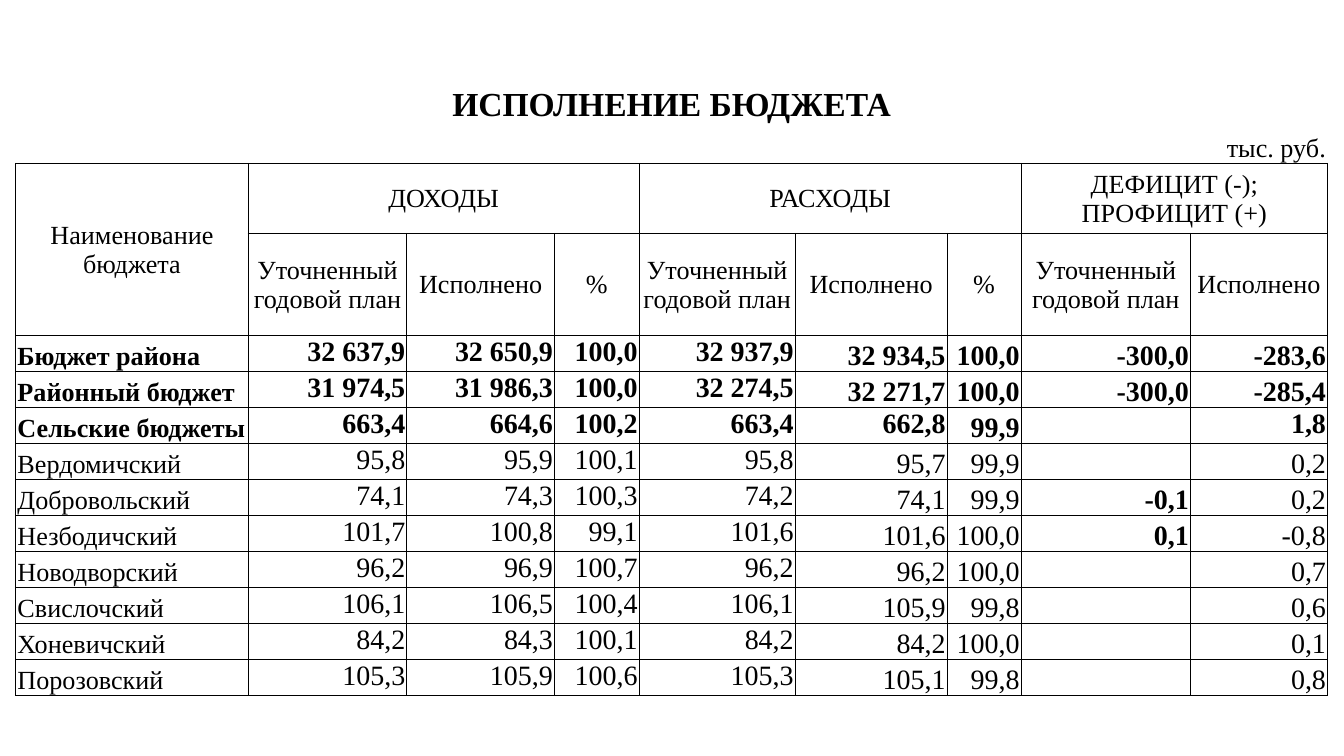
from lxml.etree import SubElement
from pptx import Presentation
from pptx.dml.color import RGBColor
from pptx.enum.text import MSO_ANCHOR as Anchor, PP_ALIGN as Align
from pptx.oxml.ns import qn
from pptx.util import Cm, Pt

BLACK = RGBColor(0x00, 0x00, 0x00)
WHITE = RGBColor(0xFF, 0xFF, 0xFF)
FONT = "Times New Roman"

# Content
TITLE = "ИСПОЛНЕНИЕ БЮДЖЕТА"
UNIT = "тыс. руб."
NAME_HEADING = "Наименование бюджета"
PLAN, DONE = "Уточненный годовой план", "Исполнено"
GROUPS = [  # heading, first column, last column
    ("ДОХОДЫ", 1, 5),
    ("РАСХОДЫ", 6, 9),
    ("ДЕФИЦИТ (-); ПРОФИЦИТ (+)", 10, 12),
]
HEADINGS = [PLAN, DONE, "%", PLAN, DONE, "%", PLAN, DONE]
BUDGETS = [
    ("Бюджет района", "32 637,9", "32 650,9", "100,0", "32 937,9", "32 934,5", "100,0", "-300,0", "-283,6"),
    ("Районный бюджет", "31 974,5", "31 986,3", "100,0", "32 274,5", "32 271,7", "100,0", "-300,0", "-285,4"),
    ("Сельские бюджеты", "663,4", "664,6", "100,2", "663,4", "662,8", "99,9", "", "1,8"),
    ("Вердомичский", "95,8", "95,9", "100,1", "95,8", "95,7", "99,9", "", "0,2"),
    ("Добровольский", "74,1", "74,3", "100,3", "74,2", "74,1", "99,9", "-0,1", "0,2"),
    ("Незбодичский", "101,7", "100,8", "99,1", "101,6", "101,6", "100,0", "0,1", "-0,8"),
    ("Новодворский", "96,2", "96,9", "100,7", "96,2", "96,2", "100,0", "", "0,7"),
    ("Свислочский", "106,1", "106,5", "100,4", "106,1", "105,9", "99,8", "", "0,6"),
    ("Хоневичский", "84,2", "84,3", "100,1", "84,2", "84,2", "100,0", "", "0,1"),
    ("Порозовский", "105,3", "105,9", "100,6", "105,3", "105,1", "99,8", "", "0,8"),
]
TOTAL_ROWS = 3  # leading rows set in bold
VILLAGE_TOTAL = 2  # row whose executed amounts all sit at the top

# Grid: sizes in centimetres, spans as (first, last) column
COLUMN_WIDTHS = [4.39, 2.57, 0.43, 1.85, 0.94, 1.6, 2.95, 2.29, 0.58, 1.4, 3.2, 0.3, 2.29]
ROW_HEIGHTS = [0.86, 0.69, 1.32, 1.93] + [0.68] * len(BUDGETS)
TITLE_ROW, UNIT_ROW, GROUP_ROW, HEADING_ROW, FIRST_BUDGET_ROW = range(5)
LAST_COLUMN = len(COLUMN_WIDTHS) - 1
UNIT_SPANS = [(2, 3), (4, 5), (8, 9), (10, 11)]
VALUE_SPANS = [(1, 2), (3, 4), (5, 5), (6, 6), (7, 8), (9, 9), (10, 10), (11, 12)]


def write(cell, text, size=14, bold=False, align=Align.CENTER, anchor=Anchor.MIDDLE):
    cell.vertical_anchor = anchor
    paragraph = cell.text_frame.paragraphs[0]
    paragraph.alignment = align
    run = paragraph.add_run()
    run.text = text
    run.font.name = FONT
    run.font.size = Pt(size)
    run.font.bold = bold
    run.font.color.rgb = BLACK


def set_borders(cell, black_sides):
    properties = cell._tc.get_or_add_tcPr()
    for side in "LRTB":
        line = SubElement(properties, qn(f"a:ln{side}"), w=str(Pt(0.5)))
        if side in black_sides:
            fill = SubElement(line, qn("a:solidFill"))
            SubElement(fill, qn("a:srgbClr"), val=str(BLACK))
        else:
            SubElement(line, qn("a:noFill"))


def merge(table, row, first, last, last_row=None):
    cell = table.cell(row, first)
    end = table.cell(row if last_row is None else last_row, last)
    if cell is not end and (first != last or last_row is not None):
        cell.merge(end)
    return cell


def prepare_cells(table):
    for row_index, row in enumerate(table.rows):
        black_sides = {TITLE_ROW: "", UNIT_ROW: "B"}.get(row_index, "LRTB")
        for cell in row.cells:
            set_borders(cell, black_sides)
            cell.fill.solid()
            cell.fill.fore_color.rgb = WHITE
            cell.margin_left = cell.margin_right = cell.margin_top = Cm(0.03)
            cell.margin_bottom = 0
            # Keeps empty cells from stretching their row
            if row_index != TITLE_ROW:
                paragraph = cell.text_frame.paragraphs[0]
                SubElement(paragraph._p, qn("a:endParaRPr"), sz="1200")


def fill_headings(table):
    write(merge(table, TITLE_ROW, 0, LAST_COLUMN), TITLE, size=18, bold=True)
    for first, last in UNIT_SPANS:
        merge(table, UNIT_ROW, first, last)
    write(table.cell(UNIT_ROW, LAST_COLUMN), UNIT, align=Align.RIGHT, anchor=Anchor.BOTTOM)
    write(merge(table, GROUP_ROW, 0, 0, last_row=HEADING_ROW), NAME_HEADING)
    for heading, first, last in GROUPS:
        write(merge(table, GROUP_ROW, first, last), heading)
    for heading, (first, last) in zip(HEADINGS, VALUE_SPANS):
        write(merge(table, HEADING_ROW, first, last), heading)


def fill_budgets(table):
    for index, (name, *values) in enumerate(BUDGETS):
        row = FIRST_BUDGET_ROW + index
        total = index < TOTAL_ROWS
        write(table.cell(row, 0), name, bold=total, align=Align.LEFT, anchor=Anchor.BOTTOM)
        for position, (value, (first, last)) in enumerate(zip(values, VALUE_SPANS)):
            cell = merge(table, row, first, last)
            if not value:
                continue
            at_top = position < 4 or (index == VILLAGE_TOTAL and HEADINGS[position] == DONE)
            deficit_plan = position == 6
            write(cell, value, size=15, bold=total or deficit_plan, align=Align.RIGHT,
                  anchor=Anchor.TOP if at_top else Anchor.BOTTOM)


def main():
    presentation = Presentation()
    presentation.slide_width, presentation.slide_height = Cm(25.4), Cm(14.29)
    slide = presentation.slides.add_slide(presentation.slide_layouts[6])

    # Budget table
    table = slide.shapes.add_table(
        len(ROW_HEIGHTS), len(COLUMN_WIDTHS), Cm(0.3), Cm(1.54),
        Cm(sum(COLUMN_WIDTHS)), Cm(sum(ROW_HEIGHTS))).table
    table.first_row = table.horz_banding = False
    for column, width in zip(table.columns, COLUMN_WIDTHS):
        column.width = Cm(width)
    for row, height in zip(table.rows, ROW_HEIGHTS):
        row.height = Cm(height)

    prepare_cells(table)
    fill_headings(table)
    fill_budgets(table)
    presentation.save("out.pptx")


if __name__ == "__main__":
    main()
